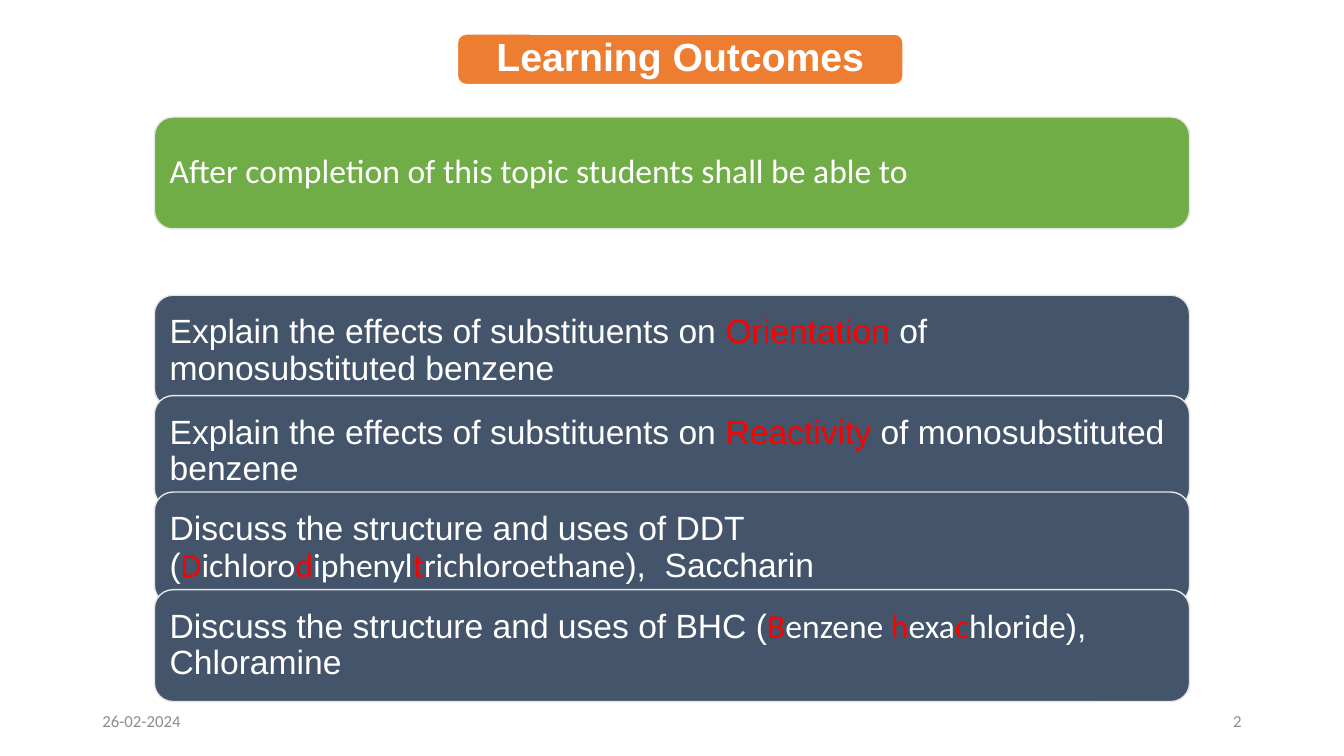
from pptx import Presentation
from pptx.dml.color import RGBColor
from pptx.enum.shapes import MSO_SHAPE
from pptx.enum.text import MSO_ANCHOR, PP_ALIGN
from pptx.util import Cm, Pt

WHITE, RED, GREY = "FFFFFF", "FF0000", "8C8C8C"
ORANGE, GREEN, SLATE, PALE = "ED7D31", "70AD47", "44546A", "E7E6E6"


def color(hex_code):
    return RGBColor.from_string(hex_code)


def write(frame, runs, size, align, bold=False):
    frame.word_wrap = True
    frame.vertical_anchor = MSO_ANCHOR.MIDDLE
    paragraph = frame.paragraphs[0]
    paragraph.alignment = align
    for text, font_name, hex_code in runs:
        run = paragraph.add_run()
        run.text = text
        run.font.name = font_name
        run.font.size = Pt(size)
        run.font.bold = bold
        run.font.color.rgb = color(hex_code)
    return paragraph


presentation = Presentation()
presentation.slide_width = Cm(33.87)
presentation.slide_height = Cm(19.05)
slide = presentation.slides.add_slide(presentation.slide_layouts[6])

heading = [("Learning Outcomes", "Arial", WHITE)]
introduction = [("After completion of this topic students shall be able to", "Calibri", WHITE)]
orientation = [
    ("Explain the effects of substituents on ", "Arial", WHITE),
    ("Orientation", "Arial", RED),
    (" of monosubstituted benzene", "Arial", WHITE),
]
reactivity = [
    ("Explain the effects of substituents on ", "Arial", WHITE),
    ("Reactivity ", "Arial", RED),
    ("of monosubstituted benzene", "Arial", WHITE),
]
ddt = [
    ("Discuss the structure and uses of DDT (", "Arial", WHITE),
    ("D", "Calibri", RED),
    ("ichloro", "Calibri", WHITE),
    ("d", "Calibri", RED),
    ("iphenyl", "Calibri", WHITE),
    ("t", "Calibri", RED),
    ("richloroethane", "Calibri", WHITE),
    ("),  Saccharin", "Arial", WHITE),
]
bhc = [
    ("Discuss the structure and uses of BHC (", "Arial", WHITE),
    ("B", "Calibri", RED),
    ("enzene ", "Calibri", WHITE),
    ("h", "Calibri", RED),
    ("exa", "Calibri", WHITE),
    ("c", "Calibri", RED),
    ("hloride", "Calibri", WHITE),
    ("), Chloramine", "Arial", WHITE),
]

title_place = (11.53, 0.86, 11.23, 1.27)
outcome_left, outcome_width, outcome_height = 3.89, 26.09, 2.82
panels = [(title_place, ORANGE, WHITE, heading, 28, PP_ALIGN.CENTER, True)]
for top, fill, runs, align in [
    (2.95, GREEN, introduction, PP_ALIGN.JUSTIFY),
    (7.44, SLATE, orientation, PP_ALIGN.LEFT),
    (9.97, SLATE, reactivity, PP_ALIGN.LEFT),
    (12.4, SLATE, ddt, PP_ALIGN.LEFT),
    (14.86, SLATE, bhc, PP_ALIGN.LEFT),
]:
    place = (outcome_left, top, outcome_width, outcome_height)
    panels.append((place, fill, PALE, runs, 24, align, False))

for place, fill, outline, runs, size, align, bold in panels:
    panel = slide.shapes.add_shape(MSO_SHAPE.ROUNDED_RECTANGLE, *map(Cm, place))
    panel.shadow.inherit = False
    panel.fill.solid()
    panel.fill.fore_color.rgb = color(fill)
    panel.line.color.rgb = color(outline)
    panel.line.width = Pt(1)
    frame = panel.text_frame
    frame.margin_left = frame.margin_right = Cm(0.25)
    frame.margin_top = frame.margin_bottom = 0
    write(frame, runs, size, align, bold).line_spacing = 0.9

for left, text, align in [
    (2.33, "26-02-2024", PP_ALIGN.LEFT),
    (23.92, "2", PP_ALIGN.RIGHT),
]:
    footer = slide.shapes.add_textbox(Cm(left), Cm(17.66), Cm(7.62), Cm(1.01))
    write(footer.text_frame, [(text, "Calibri", GREY)], 12, align)

presentation.save("out.pptx")
